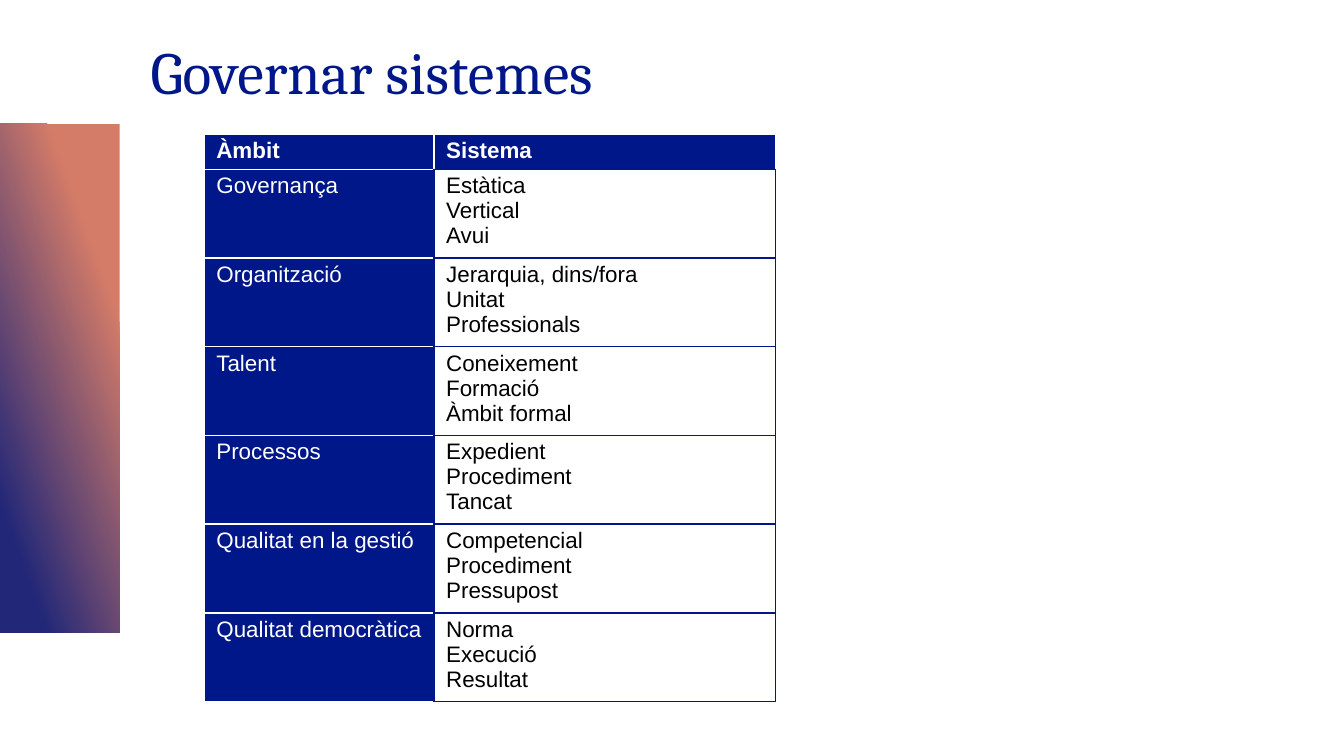
from typing import NamedTuple

from lxml import etree
from pptx import Presentation
from pptx.dml.color import RGBColor
from pptx.enum.shapes import MSO_SHAPE
from pptx.enum.text import MSO_ANCHOR, PP_ALIGN
from pptx.oxml.ns import qn
from pptx.util import Inches, Pt

RECT = MSO_SHAPE.RECTANGLE
BOTTOM = MSO_ANCHOR.BOTTOM
LEFT = PP_ALIGN.LEFT

SLIDE_WIDTH = Inches(10)
SLIDE_HEIGHT = SLIDE_WIDTH * 9 // 16

COLORS = {"blue": "001789", "white": "FFFFFF", "black": "000000",
          "coral": "D47C68", "navy": "222778"}


class Scope(NamedTuple):
    name: str
    system: tuple[str, ...]


class CellStyle(NamedTuple):
    fill: str
    color: str
    borders: dict[str, str]  # side (L, R, T, B) -> colour
    bold: bool = False


SCOPES = [
    Scope("Governança", ("Estàtica", "Vertical", "Avui")),
    Scope("Organització", ("Jerarquia, dins/fora", "Unitat", "Professionals")),
    Scope("Talent", ("Coneixement", "Formació", "Àmbit formal")),
    Scope("Processos", ("Expedient", "Procediment", "Tancat")),
    Scope("Qualitat en la gestió", ("Competencial", "Procediment", "Pressupost")),
    Scope("Qualitat democràtica", ("Norma", "Execució", "Resultat")),
]

HEAD_LEFT = CellStyle("blue", "white", dict.fromkeys("LRTB", "white"), True)
HEAD_RIGHT = CellStyle("blue", "white",
                       {"L": "white", "R": "white", "T": "white", "B": "blue"}, True)
BODY_LEFT = CellStyle("blue", "white", {"R": "blue", "T": "white", "B": "white"})
BODY_RIGHT = CellStyle("white", "black", dict.fromkeys("LRTB", "blue"))


def rgb(name: str) -> RGBColor:
    return RGBColor.from_string(COLORS[name])


def write(tf, *lines: str, size: float = 12, font: str = "Arial",
          color: str = "black", bold: bool = False, spacing: float = 1.0) -> None:
    for i, line in enumerate(lines):
        p = tf.paragraphs[0] if i == 0 else tf.add_paragraph()
        p.alignment = LEFT
        p.line_spacing = spacing
        r = p.add_run()
        r.text = line
        r.font.size = Pt(size)
        r.font.name = font
        r.font.bold = bold
        r.font.color.rgb = rgb(color)


def add_border(cell, side: str, color: str) -> None:
    tc_pr = cell._tc.get_or_add_tcPr()
    ln = etree.SubElement(tc_pr, qn(f"a:ln{side}"), w=str(Pt(1)))
    fill = etree.SubElement(ln, qn("a:solidFill"))
    etree.SubElement(fill, qn("a:srgbClr"), val=COLORS[color])


def fill_cell(cell, lines: tuple[str, ...], style: CellStyle) -> None:
    cell.margin_left, cell.margin_right = Inches(0.09), Inches(0.06)
    cell.margin_top = cell.margin_bottom = Inches(0.03)
    for side, color in style.borders.items():
        add_border(cell, side, color)
    cell.fill.solid()
    cell.fill.fore_color.rgb = rgb(style.fill)
    write(cell.text_frame, *lines, color=style.color, bold=style.bold)


def add_side_bar(s) -> None:
    sp = s.shapes.add_shape(RECT, Inches(-1.45), Inches(2.37), Inches(3.79), Inches(0.89))
    sp.shadow.inherit = False
    sp.rotation = 90
    sp._element.spPr.find(qn("a:xfrm")).set("flipV", "1")
    sp.line.fill.background()
    sp.fill.gradient()
    sp.fill.gradient_angle = 70
    for stop, position, color in zip(sp.fill.gradient_stops, (0.23, 0.85), ("coral", "navy")):
        stop.position = position
        stop.color.rgb = rgb(color)


def add_title(s, text: str) -> None:
    title = s.shapes.title
    title.left, title.top = Inches(1.02), Inches(0.26)
    title.width, title.height = Inches(8.32), Inches(0.59)
    tf = title.text_frame
    tf.vertical_anchor = BOTTOM
    write(tf, text, size=32, font="Cambria", color="blue", spacing=0.9)


def add_scope_table(s) -> None:
    table = s.shapes.add_table(len(SCOPES) + 1, 2, Inches(1.52), Inches(1),
                               Inches(4.25), Inches(4.22)).table
    table.first_row = table.horz_banding = False
    for column, width in zip(table.columns, (1.71, 2.54)):
        column.width = Inches(width)
    for i, row in enumerate(table.rows):
        row.height = Inches(0.66 if i else 0.26)

    fill_cell(table.cell(0, 0), ("Àmbit",), HEAD_LEFT)
    fill_cell(table.cell(0, 1), ("Sistema",), HEAD_RIGHT)
    for i, scope in enumerate(SCOPES, start=1):
        fill_cell(table.cell(i, 0), (scope.name,), BODY_LEFT)
        fill_cell(table.cell(i, 1), scope.system, BODY_RIGHT)


def main() -> None:
    prs = Presentation()
    prs.slide_width, prs.slide_height = SLIDE_WIDTH, SLIDE_HEIGHT
    s = prs.slides.add_slide(prs.slide_layouts[5])
    add_side_bar(s)
    add_title(s, "Governar sistemes")
    add_scope_table(s)
    prs.save("out.pptx")


if __name__ == "__main__":
    main()
